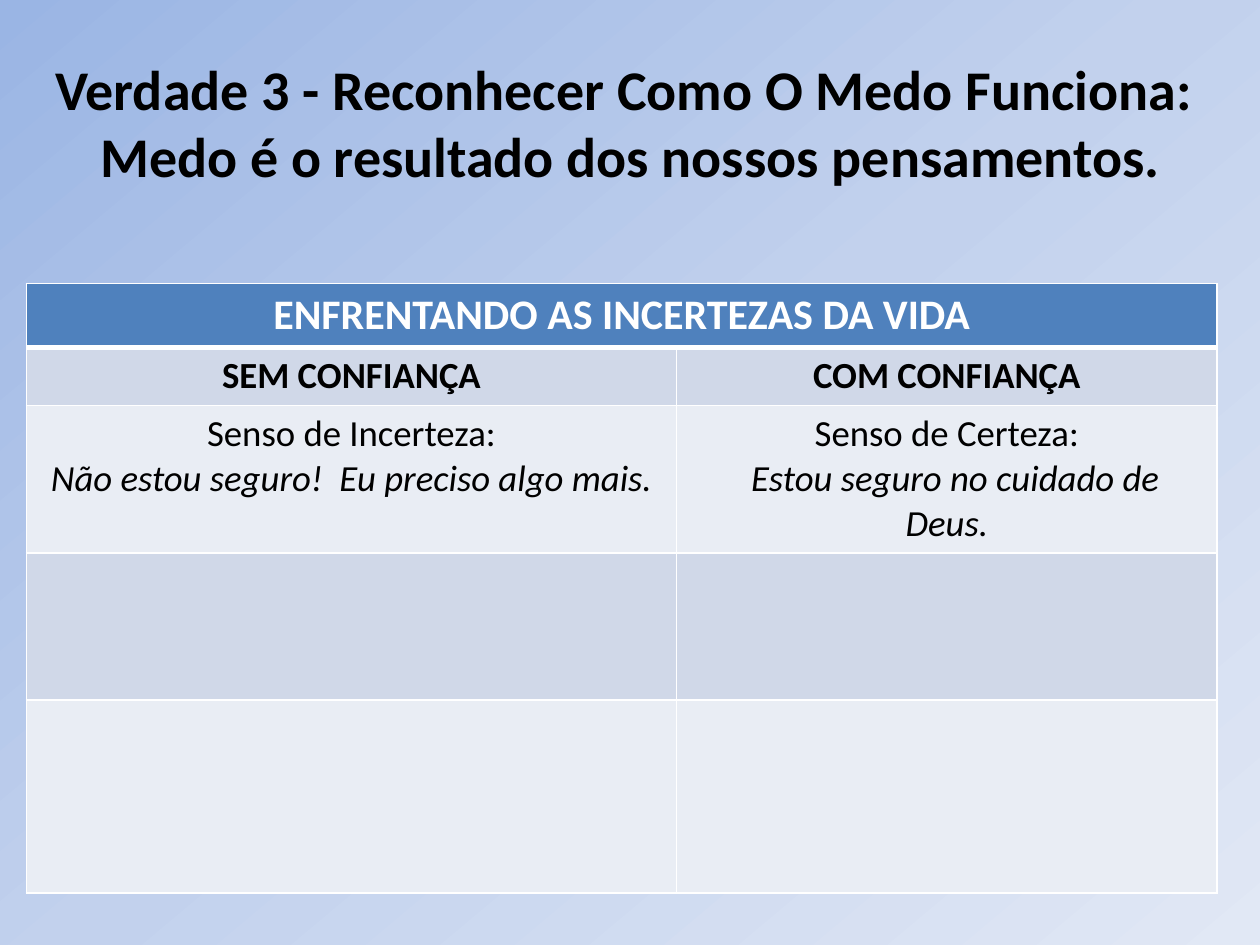
from copy import deepcopy

from lxml import etree
from pptx import Presentation
from pptx.dml.color import RGBColor
from pptx.enum import text
from pptx.oxml.ns import qn
from pptx.util import Inches, Pt

FONT = "Calibri"
BLACK = RGBColor(0x00, 0x00, 0x00)
WHITE = RGBColor(0xFF, 0xFF, 0xFF)
HEADER = RGBColor(0x4F, 0x81, 0xBD)
BANDS = [RGBColor(0xD0, 0xD8, 0xE8), RGBColor(0xE9, 0xED, 0xF4)]
SKY = [RGBColor(0x9A, 0xB5, 0xE4), RGBColor(0xC2, 0xD1, 0xED), RGBColor(0xE1, 0xE8, 0xF5)]

COLUMNS = [5.16, 4.29]
ROWS = [0.5, 0.46, 1.17, 1.17, 1.53]


def style(p, size, color, bold):
    p.alignment = text.PP_ALIGN.CENTER
    p.font.name = FONT
    p.font.size = Pt(size)
    p.font.color.rgb = color
    p.font.bold = bold


def add_background(s):
    fill = s.background.fill
    fill.gradient()
    fill.gradient_angle = 310  # counter-clockwise
    stops = s.element.find(".//" + qn("a:gsLst"))
    stops.append(deepcopy(stops[-1]))
    for i, (stop, color) in enumerate(zip(fill.gradient_stops, SKY)):
        stop.position = i / 2
        stop.color.rgb = color


def add_title(s, left, top, width, height):
    tf = s.shapes.add_textbox(Inches(left), Inches(top), Inches(width), Inches(height)).text_frame
    tf.word_wrap = True
    tf.vertical_anchor = text.MSO_ANCHOR.TOP
    p = tf.paragraphs[0]
    style(p, 32, BLACK, True)
    p.add_run().text = "Verdade 3 - Reconhecer Como O Medo Funciona: "
    r = p.add_run()
    r.text = " "
    r.font.underline = True
    p.add_run().text = "Medo é o resultado dos nossos pensamentos."


def set_borders(cell, bottom=1):
    tc_pr = cell._tc.get_or_add_tcPr()
    for side, width in (("L", 1), ("R", 1), ("T", 1), ("B", bottom)):
        ln = etree.SubElement(tc_pr, qn("a:ln" + side), w=str(Pt(width)))
        solid = etree.SubElement(ln, qn("a:solidFill"))
        etree.SubElement(solid, qn("a:srgbClr"), val=str(WHITE))


def add_statement(cell, heading, indent, statement):
    p = cell.text_frame.paragraphs[0]
    p.add_run().text = heading
    p.add_line_break()
    if indent:
        p.add_run().text = indent
    r = p.add_run()
    r.text = statement
    r.font.italic = True


def add_comparison(s, left, top):
    frame = s.shapes.add_table(len(ROWS), len(COLUMNS), Inches(left), Inches(top),
                               Inches(sum(COLUMNS)), Inches(sum(ROWS)))
    table = frame.table
    for column, width in zip(table.columns, COLUMNS):
        column.width = Inches(width)
    for row, height in zip(table.rows, ROWS):
        row.height = Inches(height)

    # Cell borders, fills and fonts
    for i, row in enumerate(table.rows):
        for cell in row.cells:
            set_borders(cell, bottom=1 if i else 3)
            cell.fill.solid()
            cell.fill.fore_color.rgb = BANDS[(i - 1) % 2] if i else HEADER
            style(cell.text_frame.paragraphs[0], 21 if i else 24,
                  BLACK if i else WHITE, i < 2)

    # Headings
    table.cell(0, 0).merge(table.cell(0, 1))
    for (i, j), heading in {(0, 0): "ENFRENTANDO AS INCERTEZAS DA VIDA",
                            (1, 0): "SEM CONFIANÇA",
                            (1, 1): "COM CONFIANÇA"}.items():
        table.cell(i, j).text_frame.paragraphs[0].add_run().text = heading

    # Statements
    add_statement(table.cell(2, 0), "Senso de Incerteza:", "",
                  "Não estou seguro!  Eu preciso algo mais.")
    add_statement(table.cell(2, 1), "Senso de Certeza:", "  ",
                  "Estou seguro no cuidado de Deus.")


def main():
    prs = Presentation()
    prs.slide_width, prs.slide_height = Inches(10), Inches(7.5)
    s = prs.slides.add_slide(prs.slide_layouts[6])
    add_background(s)
    add_comparison(s, 0.21, 2.25)
    add_title(s, 0.28, 0.38, 9.45, 0.93)
    prs.save("out.pptx")


if __name__ == "__main__":
    main()
